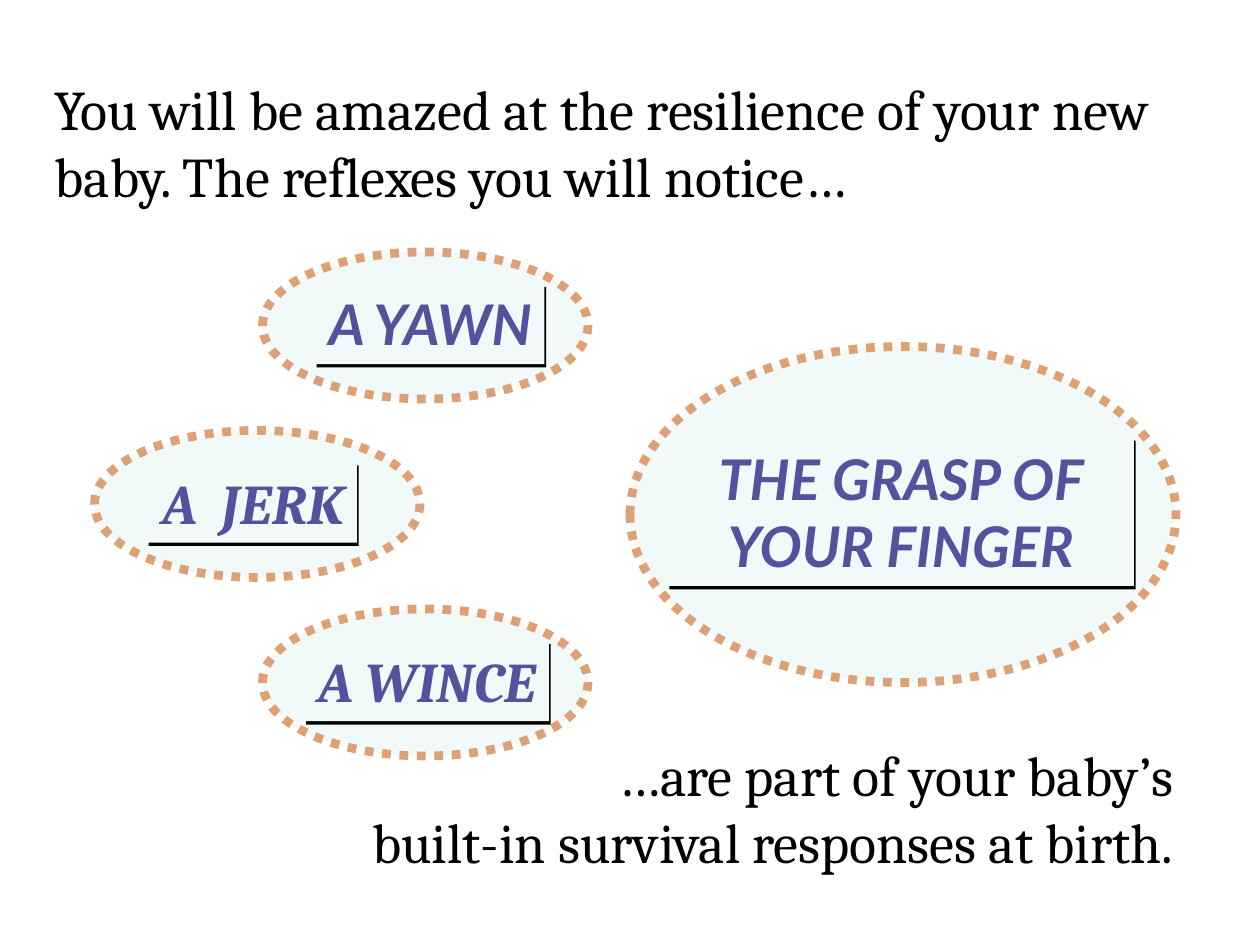
from lxml.etree import SubElement
from pptx import Presentation
from pptx.dml.color import RGBColor
from pptx.enum.dml import MSO_LINE
from pptx.enum.shapes import MSO_SHAPE
from pptx.enum.text import MSO_ANCHOR, MSO_AUTO_SIZE, PP_ALIGN
from pptx.oxml.ns import qn
from pptx.util import Inches, Pt

COLORS = {
    "bubble": "F1F9F9", "dots": "DEA075", "text": "000000", "shadow": "000000",
    "outline": "404040", "edge": "5F5FA1", "body": "52529D", "core": "262688",
}
GRADIENT = [(0, "edge"), (25, "body"), (50, "core"), (75, "body"), (100, "edge")]
BODY = {"name": "Cambria", "size": Pt(32), "bold": False}
LABEL = {"size": Pt(32), "bold": True, "italic": True}
COLS, ROWS = 120, 90  # grid of the slide
STEP = 17             # rows from one small bubble to the next

prs = Presentation()
prs.slide_width, prs.slide_height = Inches(10), Inches(7.5)


def rgb(name):
    return RGBColor.from_string(COLORS[name])


def grid(col, row, cols, rows):
    w, h = prs.slide_width / COLS, prs.slide_height / ROWS
    return [round(v) for v in (col * w, row * h, cols * w, rows * h)]


def place(sp, box):
    sp.left, sp.top, sp.width, sp.height = grid(*box)


def set_format(target, values):
    for key, value in values.items():
        setattr(target, key, value)


def add_color(parent, name):
    return SubElement(parent, qn("a:srgbClr"), val=COLORS[name])


def add_shadow(sp):
    effects = SubElement(sp._element.spPr, qn("a:effectLst"))
    shadow = SubElement(effects, qn("a:outerShdw"), dist=str(Pt(2.2)),
                        dir=str(63 * 60000), algn="ctr", rotWithShape="0")
    add_color(shadow, "shadow")


def style_lettering(r):
    """Outlined lettering with a vertical gradient."""
    rpr = r.font._element
    line = SubElement(rpr, qn("a:ln"), w=str(Pt(0.9)))
    add_color(SubElement(line, qn("a:solidFill")), "outline")
    grad = SubElement(rpr, qn("a:gradFill"), rotWithShape="0")
    stops = SubElement(grad, qn("a:gsLst"))
    for pos, name in GRADIENT:
        add_color(SubElement(stops, qn("a:gs"), pos=str(pos * 1000)), name)
    SubElement(grad, qn("a:lin"), ang=str(90 * 60000), scaled="1")


def add_statement(sp, box, lines, align):
    """Plain running text in the given box."""
    place(sp, box)
    tf = sp.text_frame
    set_format(tf, {"word_wrap": True, "auto_size": MSO_AUTO_SIZE.NONE,
                    "vertical_anchor": MSO_ANCHOR.MIDDLE})
    for i, line in enumerate(lines):
        p = tf.add_paragraph() if i else tf.paragraphs[0]
        p.alignment = align
        r = p.add_run()
        r.text = line
        set_format(r.font, BODY)
        r.font.color.rgb = rgb("text")


def add_bubble(slide, box, label_box, text, font, align=PP_ALIGN.RIGHT,
               anchor=MSO_ANCHOR.TOP, wrap=False):
    """Dotted ellipse with a label; label_box is relative to the ellipse."""
    group = slide.shapes.add_group_shape()
    col, row = box[:2]
    dx, dy, cols, rows = label_box
    ellipse = group.shapes.add_shape(MSO_SHAPE.OVAL, *grid(*box))
    label = group.shapes.add_shape(
        MSO_SHAPE.RECTANGLE, *grid(col + dx, row + dy, cols, rows))
    for sp in (ellipse, label):
        sp.fill.solid()
        sp.fill.fore_color.rgb = rgb("bubble")

    ellipse.shadow.inherit = False
    ellipse.line.color.rgb = rgb("dots")
    set_format(ellipse.line, {"width": Pt(5), "dash_style": MSO_LINE.ROUND_DOT})

    label.line.fill.background()
    add_shadow(label)
    tf = label.text_frame
    set_format(tf, {"word_wrap": wrap, "vertical_anchor": anchor,
                    "auto_size": MSO_AUTO_SIZE.SHAPE_TO_FIT_TEXT})
    p = tf.paragraphs[0]
    p.alignment = align
    r = p.add_run()
    r.text = text
    style_lettering(r)
    set_format(r.font, {**LABEL, "name": font})


def main():
    slide = prs.slides.add_slide(prs.slide_layouts[5])

    # Opening statement
    add_statement(slide.shapes.title, (4, 8, 114, 11),
                  ["You will be amazed at the resilience of your new baby. "
                   "The reflexes you will notice…"], PP_ALIGN.LEFT)

    # Small bubbles: column, step, label offset, label width, text, font, wrap
    for col, step, dx, cols, text, font, wrap in [
        (25, 0, 5, 21.84, "A YAWN", "Lato", False),
        (25, 2, 4, 23.28, "A WINCE", "Cambria", False),
        (9, 1, 5, 20, "A  JERK", "Cambria", True),
    ]:
        add_bubble(slide, (col, 24 + step * STEP, 31, 14), (dx, 3, cols, 7.68),
                   text, font, wrap=wrap)

    # Closing statement
    add_statement(slide.shapes.add_textbox(0, 0, 0, 0), (27, 71, 86, 11.8),
                  ["…are part of your baby’s",
                   "built-in survival responses at birth."], PP_ALIGN.RIGHT)

    # Large bubble
    add_bubble(slide, (60, 33, 52, 32), (3.6, 8.64, 44.4, 14.16),
               "THE GRASP OF YOUR FINGER", "Lato",
               PP_ALIGN.CENTER, MSO_ANCHOR.MIDDLE, True)

    prs.save("out.pptx")


if __name__ == "__main__":
    main()
